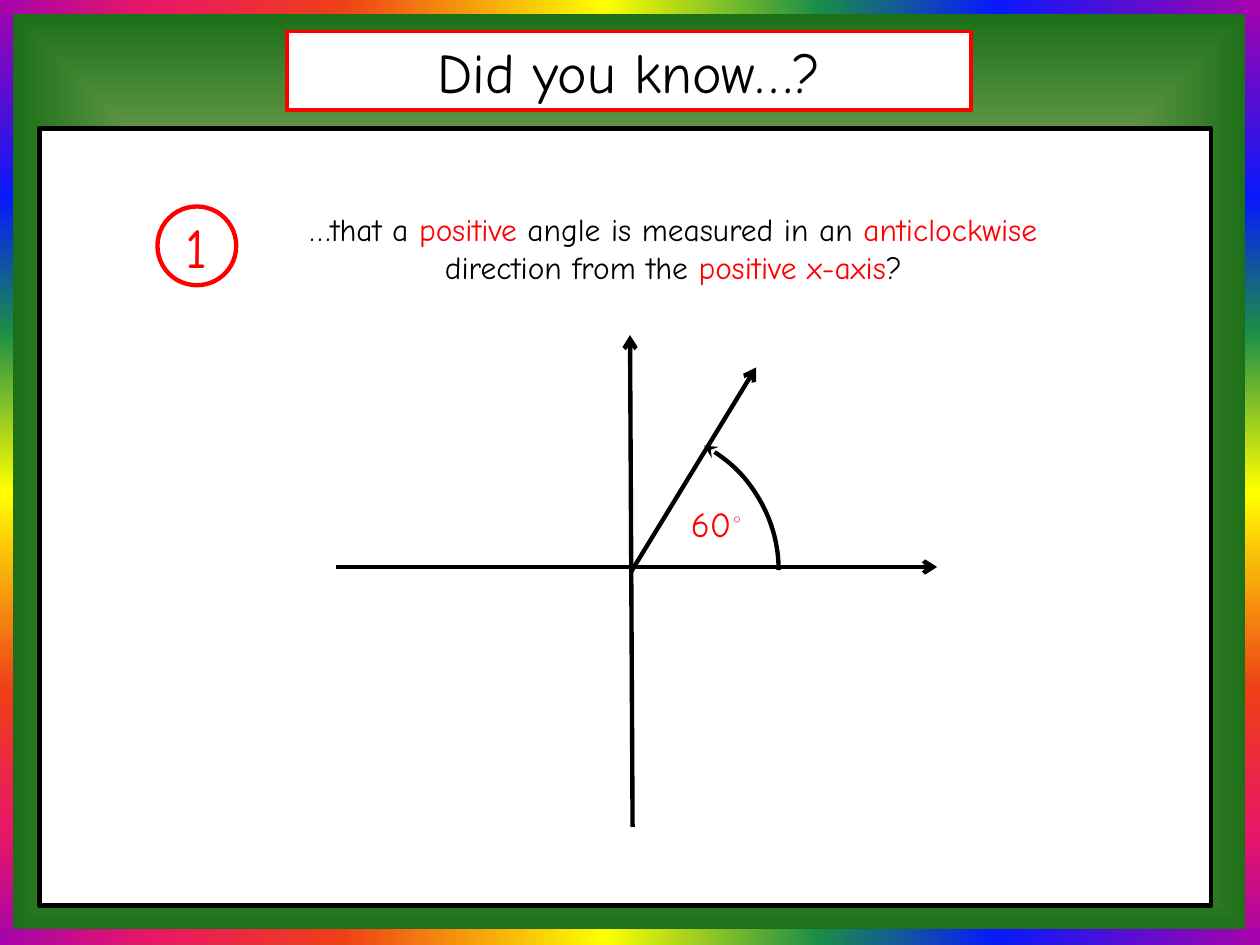
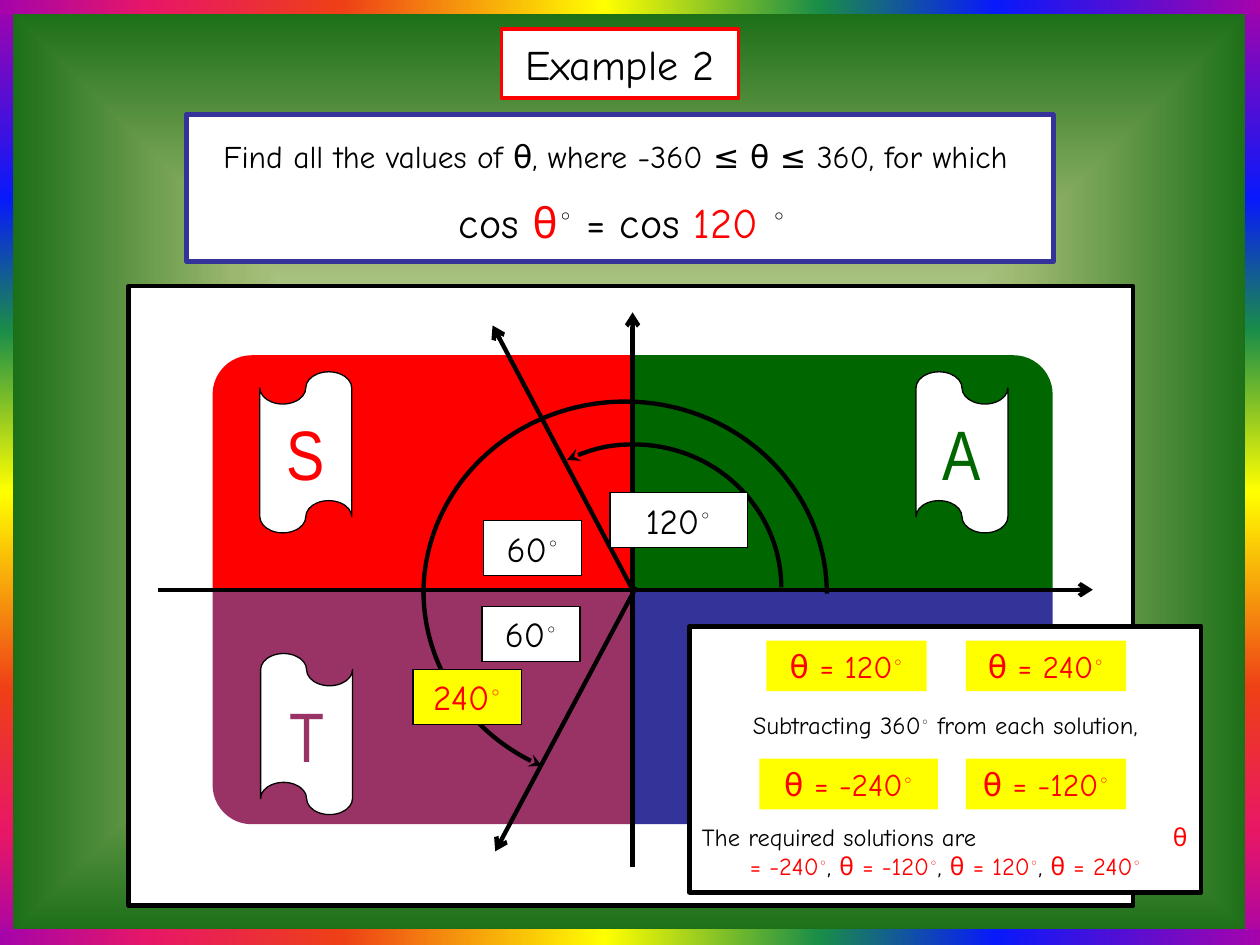
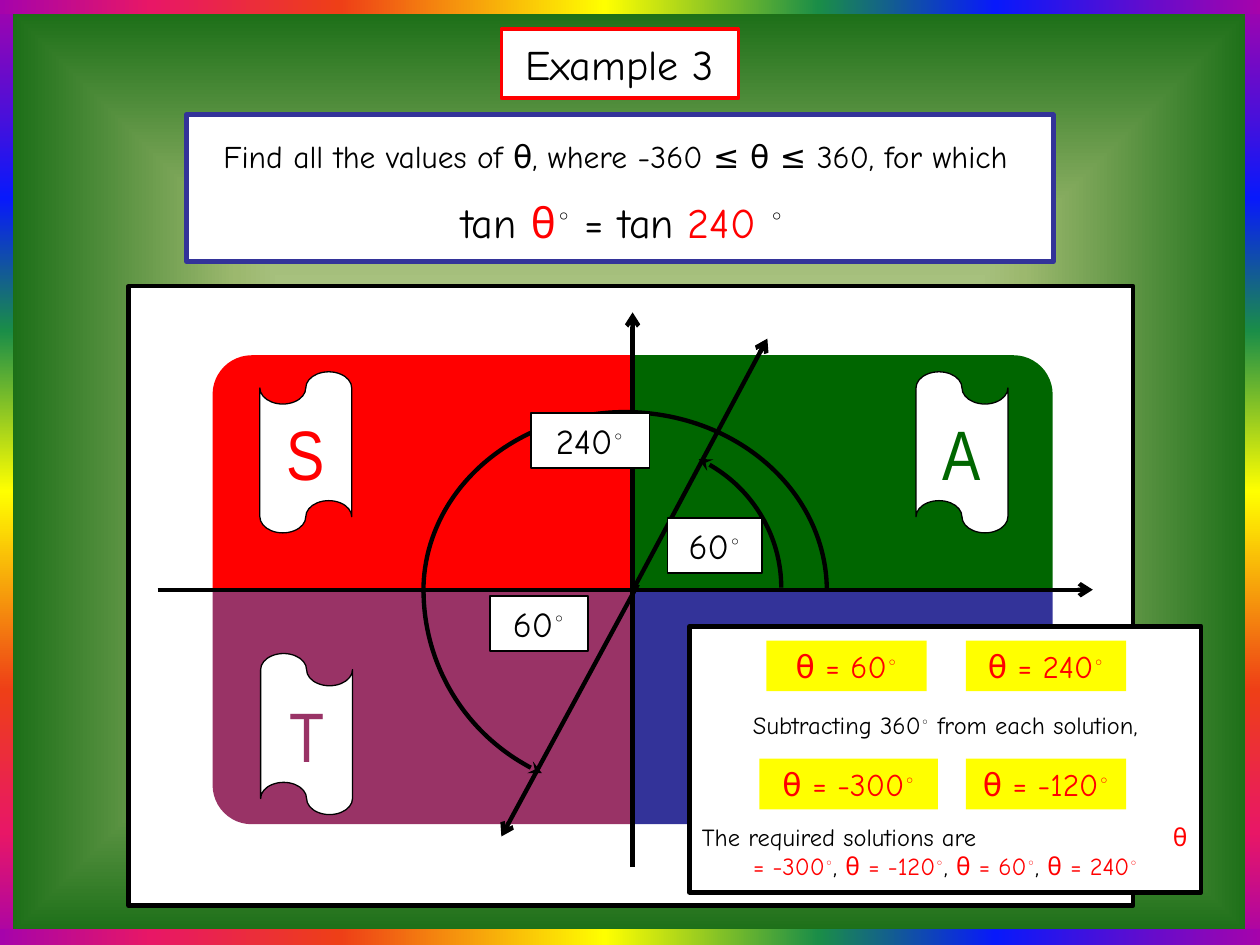
from dataclasses import dataclass

from lxml import etree
from pptx import Presentation
from pptx import util as u
from pptx.dml import color
from pptx.enum import shapes, text
from pptx.oxml import ns


@dataclass(frozen=True)
class Theme:
    black: str = "000000"
    white: str = "FFFFFF"
    red: str = "FF0000"
    green: str = "006600"
    plum: str = "993366"
    blue: str = "333399"
    yellow: str = "FFFF00"
    backdrop: tuple = ((0, "DDEBCF"), (50, "9CB86E"), (100, "156B13"))
    rainbow: tuple = ((0, "A603AB"), (21, "0819FB"), (35, "1A8D48"), (52, "FFFF00"),
                      (73, "EE3F17"), (88, "E81766"), (100, "A603AB"))
    font: str = "Comic Neue"
    letter_font: str = "Arial Narrow"
    letter: int = 40
    headline: int = 32
    heading: int = 24
    label: int = 20
    body: int = 18
    note: int = 14
    thin: float = 0.75
    frame: float = 2
    thick: float = 2.5


@dataclass(frozen=True)
class Example:
    title: str
    function: str
    angle: str
    rays: tuple
    arcs: tuple
    labels: tuple
    found: tuple
    shifted: tuple


THEME = Theme()
KIND = shapes.MSO_SHAPE
ALIGN = text.PP_ALIGN
DEGREE = "◦"
ORIGIN_X, ORIGIN_Y = 361.5, 337
QUADRANT_WIDTH, QUADRANT_HEIGHT = 240, 134
LABEL_HEIGHT = 31.5


def rgb(value):
    return color.RGBColor.from_string(value)


def add_element(parent, tag, **attributes):
    return etree.SubElement(parent, ns.qn(tag), attributes)


def fill_gradient(fill, owner, stops):
    fill.gradient()
    gradient = owner.find(".//" + ns.qn("a:gradFill"))
    gradient.clear()
    gradient.set("rotWithShape", "1")
    stop_list = add_element(gradient, "a:gsLst")
    for position, value in stops:
        stop = add_element(stop_list, "a:gs", pos=str(position * 1000))
        add_element(stop, "a:srgbClr", val=value)
    return gradient


class Deck:
    def __init__(self, theme):
        self.theme = theme
        self.presentation = Presentation()
        self.presentation.slide_width = u.Pt(720)
        self.presentation.slide_height = u.Pt(540)
        self.slide = None

    def new_slide(self, title, box, size):
        self.slide = self.presentation.slides.add_slide(self.presentation.slide_layouts[5])
        shape = self.slide.shapes.title
        shape.left, shape.top, shape.width, shape.height = map(u.Pt, box)
        self.paint(shape, self.theme.white, self.theme.red, self.theme.frame)
        self.set_text(shape, [title], size)

    def decorate_master(self):
        master = self.presentation.slide_master
        gradient = fill_gradient(master.background.fill, master.element, self.theme.backdrop)
        centre = add_element(gradient, "a:path", **{"path": "shape"})
        add_element(centre, "a:fillToRect", l="50000", t="50000", r="50000", b="50000")
        bands = (((-1.5, 0, 9, 540), 0), ((711.5, 0, 9, 540), 0),
                 ((355.5, -356.5, 9, 720), 90), ((355.5, 175.5, 9, 720), 90))
        for number, (box, rotation) in enumerate(bands, 101):
            band = self.shape(KIND.RECTANGLE, box, rotation=rotation)
            gradient = fill_gradient(band.fill, band.element, self.theme.rainbow)
            add_element(gradient, "a:lin", ang="5400000", scaled="1")
            band.element.nvSpPr.cNvPr.set("id", str(number))
            master.element.cSld.spTree.append(band.element)

    def paint(self, shape, fill, line, width):
        if fill:
            shape.fill.solid()
            shape.fill.fore_color.rgb = rgb(fill)
        else:
            shape.fill.background()
        if line:
            shape.line.color.rgb = rgb(line)
            shape.line.width = u.Pt(width)
        else:
            shape.line.fill.background()

    def shape(self, kind, box, fill=None, line=None, width=THEME.thick, rotation=0, flip=""):
        shape = self.slide.shapes.add_shape(kind, *map(u.Pt, box))
        shape.shadow.inherit = False
        shape.rotation = rotation
        self.paint(shape, fill, line, width)
        for axis in flip:
            shape.element.spPr.xfrm.set("flip" + axis, "1")
        return shape

    def panel(self, box, line=THEME.black):
        self.shape(KIND.RECTANGLE, box, self.theme.white, line)

    def label(self, words, box, fill=THEME.white, line=None, ink=THEME.black, size=THEME.label):
        shape = self.shape(KIND.RECTANGLE, box, fill, line, self.theme.thin)
        self.set_text(shape, [(words, ink)], size)

    def text_box(self, box):
        return self.slide.shapes.add_textbox(*map(u.Pt, box))

    def set_text(self, shape, runs, size, font=THEME.font):
        frame = shape.text_frame
        frame.word_wrap = True
        frame.auto_size = text.MSO_AUTO_SIZE.NONE
        frame.vertical_anchor = text.MSO_ANCHOR.MIDDLE
        return self.fill_paragraph(frame.paragraphs[0], runs, size, font)

    def append_text(self, shape, runs, size, gap=0):
        paragraph = shape.text_frame.add_paragraph()
        paragraph.space_before = u.Pt(gap)
        return self.fill_paragraph(paragraph, runs, size, self.theme.font)

    def fill_paragraph(self, paragraph, runs, size, font):
        paragraph.alignment = ALIGN.CENTER
        for item in runs:
            words, ink = (item, self.theme.black) if isinstance(item, str) else item
            for number, piece in enumerate(words.split(DEGREE)):
                if number:
                    self.add_run(paragraph, DEGREE, size, font, ink, raised=True)
                if piece:
                    self.add_run(paragraph, piece, size, font, ink)
        return paragraph

    def add_run(self, paragraph, words, size, font, ink, raised=False):
        run = paragraph.add_run()
        run.text = words
        run.font.name = font
        run.font.size = u.Pt(size)
        run.font.color.rgb = rgb(ink)
        if raised:
            run._r.get_or_add_rPr().set("baseline", "30000")

    def arrow(self, start, end):
        connector = self.slide.shapes.add_connector(
            shapes.MSO_CONNECTOR.STRAIGHT, *map(u.Pt, (*start, *end)))
        connector.line.color.rgb = rgb(self.theme.black)
        connector.line.width = u.Pt(self.theme.thick)
        add_element(connector.line._get_or_add_ln(), "a:tailEnd", type="arrow")
        add_element(connector.element.spPr, "a:effectLst")

    def arc(self, box, start, rotation=0, pointed=True):
        arc = self.shape(KIND.ARC, box, line=self.theme.black, rotation=rotation)
        arc.adjustments[0] = start * 0.6
        arc.adjustments[1] = 0
        if pointed:
            add_element(arc.line._get_or_add_ln(), "a:headEnd", type="stealth")

    def quadrants(self):
        theme = self.theme
        left, top = ORIGIN_X - QUADRANT_WIDTH, ORIGIN_Y - QUADRANT_HEIGHT
        for x, y, flip, fill in ((ORIGIN_X, top, "", theme.green), (left, top, "H", theme.red),
                                 (left, ORIGIN_Y, "HV", theme.plum),
                                 (ORIGIN_X, ORIGIN_Y, "V", theme.blue)):
            self.shape(KIND.ROUND_1_RECTANGLE, (x, y, QUADRANT_WIDTH, QUADRANT_HEIGHT),
                       fill, flip=flip)
        self.arrow((90, ORIGIN_Y), (624.5, ORIGIN_Y))
        self.arrow((ORIGIN_X, 495.5), (ORIGIN_X, 178.5))
        for letter, x, y, flip, ink in (("S", 148.5, 212.5, "", theme.red),
                                        ("A", 523.5, 212.5, "H", theme.green),
                                        ("T", 149, 373.5, "H", theme.plum)):
            tape = self.shape(KIND.FLOWCHART_PUNCHED_TAPE, (x, y, 52.5, 92), theme.white,
                              theme.black, theme.thin, flip=flip)
            self.set_text(tape, [(letter, ink)], theme.letter, theme.letter_font)

    def question(self, function, angle):
        theme = self.theme
        self.panel((106.5, 65.5, 495.5, 84), theme.blue)
        box = self.text_box((101.5, 73.5, 500.5, 72.5))
        self.set_text(box, ["Find all the values of θ, where -360 ≤ θ ≤ 360, for which"],
                      theme.body)
        self.append_text(box, [f" {function} ", ("θ", theme.red), f"◦ = {function} ",
                               (angle, theme.red), " ◦"], theme.heading, 12)

    def solutions(self, found, shifted):
        theme = self.theme
        self.panel((394, 358, 292.5, 152))
        slots = ((438, 366, 91.5), (552, 366, 91.5), (434, 433.5, 102), (552, 433.5, 91.5))
        for value, (x, y, width) in zip(found + shifted, slots):
            self.label(f"θ = {value}◦", (x, y, width, 29), theme.yellow,
                       ink=theme.red, size=theme.body)
        note = self.text_box((382.5, 402, 315.5, 24.5))
        self.set_text(note, ["Subtracting 360◦ from each solution,"], theme.note)
        summary = self.text_box((394, 466, 292.5, 41))
        opening = self.set_text(summary, ["The required solutions are\t", ("θ", theme.red)],
                                theme.note)
        opening.alignment = ALIGN.LEFT
        tabs = add_element(opening._p.get_or_add_pPr(), "a:tabLst")
        add_element(tabs, "a:tab", pos=str(u.Pt(277.5)), algn="r")
        first, *others = shifted + found
        runs = [(f"= {first}◦", theme.red)]
        for value in others:
            runs += [", ", (f"θ = {value}◦", theme.red)]
        self.append_text(summary, runs, theme.note)

    def example(self, example):
        self.new_slide(example.title, (286.5, 16.5, 135.5, 39.5), self.theme.heading)
        self.question(example.function, example.angle)
        self.panel((73.5, 163.5, 574, 354))
        self.quadrants()
        for arc in example.arcs:
            self.arc(*arc)
        for start, end in example.rays:
            self.arrow(start, end)
        for words, x, y, width, fill, ink in example.labels:
            self.label(words, (x, y, width, LABEL_HEIGHT), fill, self.theme.black, ink)
        self.solutions(example.found, example.shifted)


PLAIN = (THEME.white, THEME.black)
RESULT = (THEME.yellow, THEME.red)
INNER_ARC = (278, 254, 168.5, 163.5)
EXAMPLES = (
    Example("Example 2", "cos", "120",
            rays=(((361.5, 337), (281.5, 186)), ((363.5, 335.5), (283, 486.5))),
            arcs=((INNER_ARC, 242.29),
                  ((242, 229.5, 230.5, 219.5), 179.43, 0, False),
                  ((242, 228, 230.5, 219.5), 295.45, 180)),
            labels=(("120◦", 348.5, 281.5, 78.5, *PLAIN), ("60◦", 276.5, 297.5, 56, *PLAIN),
                    ("60◦", 275.5, 346.5, 56, *PLAIN), ("240◦", 236, 382.5, 62, *RESULT)),
            found=("120", "240"), shifted=("-240", "-120")),
    Example("Example 3", "tan", "240",
            rays=(((364.5, 334), (286.5, 478)), ((361.5, 337.5), (438.5, 193.5))),
            arcs=((INNER_ARC, 296.79),
                  ((242, 235.5, 230.5, 204), 179.43, 0, False),
                  ((242, 222.5, 230.5, 229.5), 294.53, 180)),
            labels=(("60◦", 381.5, 296, 54, *PLAIN), ("60◦", 280, 340.5, 56, *PLAIN),
                    ("240◦", 303.5, 236, 67.5, *PLAIN)),
            found=("60", "240"), shifted=("-300", "-120")),
)


def add_positive_angle(deck):
    theme = deck.theme
    deck.panel((22.5, 73.5, 669.5, 444))
    deck.label("60◦", (376, 283.5, 67.5, LABEL_HEIGHT), ink=theme.red)
    badge = deck.shape(KIND.OVAL, (90, 118, 45, 45), line=theme.red)
    deck.set_text(badge, [("1", theme.red)], theme.headline)
    fact = deck.text_box((154, 116, 461.5, 51))
    deck.set_text(fact, ["…that a ", ("positive", theme.red), " angle is measured in an ",
                         ("anticlockwise", theme.red), " direction from the ",
                         ("positive x-axis", theme.red), "?"], theme.body)
    deck.arrow((361.5, 472.5), (360, 191.5))
    deck.arrow((192, 324), (535.5, 324))
    deck.arc((276.5, 244, 168.5, 163.5), 300.39)
    deck.arrow((360.5, 327), (432, 210))


def main():
    deck = Deck(THEME)
    deck.new_slide("Did you know…?", (164, 18, 391, 45), THEME.headline)
    deck.decorate_master()
    add_positive_angle(deck)
    for example in EXAMPLES:
        deck.example(example)
    deck.presentation.save("out.pptx")


if __name__ == "__main__":
    main()
